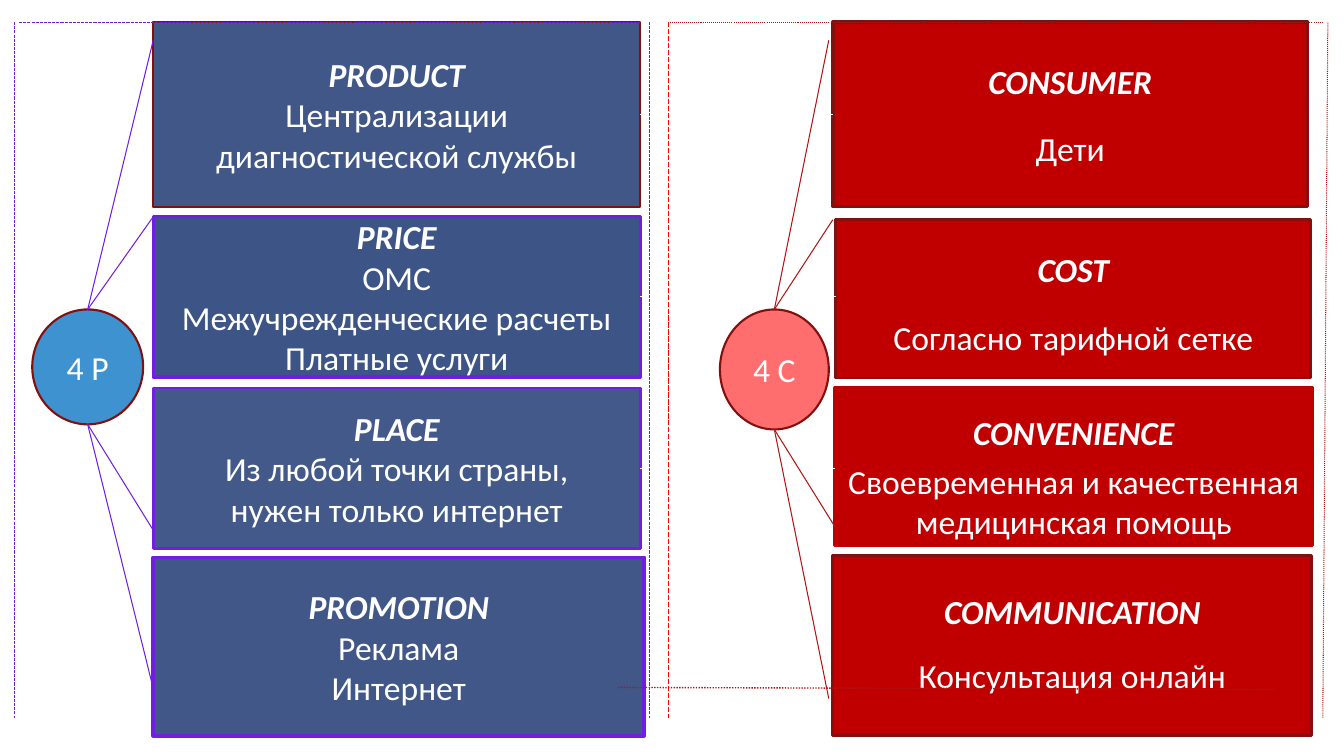
from dataclasses import dataclass
from lxml.etree import SubElement
from pptx import Presentation
from pptx.dml.color import RGBColor
from pptx.enum.dml import MSO_LINE
from pptx.enum.shapes import MSO_CONNECTOR, MSO_SHAPE
from pptx.enum.text import MSO_ANCHOR, PP_ALIGN
from pptx.oxml.ns import qn
from pptx.util import Inches, Pt


@dataclass(frozen=True)
class Theme:
    font: str = "Calibri"
    size: int = 24
    white: str = "FFFFFF"
    navy: str = "002060"
    blue: str = "0070C0"
    violet: str = "701FDD"
    crimson: str = "C00000"
    scarlet: str = "FF0000"
    maroon: str = "82100E"
    brick: str = "B01513"


theme = Theme()
SLIDE_SIZE = 13.33, 7.5
TOP, BOTTOM = 0.22, 7.12
INSET = 0.05

PRODUCT_SIDE = {
    "hub": {"text": "4 Р", "at": (0.32, 3.07, 1.1, 1.14), "fill": theme.blue, "opacity": 76},
    "fill": theme.navy,
    "ray": theme.violet,
    "ray_ends": [(1.52, 0.4), (1.52, 2.15), (1.52, 5.26), (1.52, 6.83)],
    "cards": [
        {"lines": ["PRODUCT", "Централизации диагностической службы"],
         "at": (1.52, TOP, 4.83, 1.83), "opacity": 75, "border": (theme.maroon, 1.5)},
        {"lines": ["PRICE", "ОМС", "Межучрежденческие расчеты", "Платные услуги"],
         "at": (1.52, 2.15, 4.83, 1.59), "opacity": 76, "border": (theme.violet, 2.25)},
        {"lines": ["PLACE", "Из любой точки страны,", "нужен только интернет"],
         "at": (1.52, 3.85, 4.83, 1.59), "opacity": 74, "border": (theme.violet, 2)},
        {"lines": ["PROMOTION", "Реклама", "Интернет"],
         "at": (1.52, 5.53, 4.87, 1.77), "opacity": 75, "border": (theme.violet, 2.5)},
    ],
}
CONSUMER_SIDE = {
    "hub": {"text": "4 С", "at": (7.14, 3.07, 1.08, 1.19), "fill": theme.scarlet, "opacity": 57},
    "fill": theme.crimson,
    "ray": theme.brick,
    "ray_ends": [(8.22, 0.4), (8.26, 2.18), (8.29, 5.24), (8.22, 6.93)],
    "cards": [
        {"lines": ["CONSUMER", "Дети"], "gap": 19.5,
         "at": (8.26, TOP, 4.71, 1.83), "border": (theme.maroon, 2.5)},
        {"lines": ["COST", "Согласно тарифной сетке"], "gap": 19.5, "insets": (0.13, INSET),
         "at": (8.29, 2.18, 4.71, 1.57), "border": (theme.maroon, 2)},
        {"lines": ["CONVENIENCE", "Своевременная и качественная медицинская помощь"],
         "gap": 6, "insets": (0.2, 0),
         "at": (8.28, 3.85, 4.74, 1.56), "border": (theme.crimson, 2.25)},
        {"lines": ["COMMUNICATION", "Консультация онлайн"], "gap": 17, "insets": (INSET, 0.1),
         "at": (8.26, 5.51, 4.75, 1.79), "border": (theme.maroon, 2)},
    ],
}
DASH, DOT = MSO_LINE.SQUARE_DOT, MSO_LINE.ROUND_DOT
FRAME_LINES = [
    ((6.63, TOP), (6.63, BOTTOM), theme.scarlet, 1.25, DASH),
    ((6.13, 6.82), (12.65, 6.84), theme.brick, 1, DOT),
    ((13.12, BOTTOM), (13.17, TOP), theme.brick, 0.75, DOT),
    ((13.12, TOP), (6.63, TOP), theme.brick, 0.75, DOT),
    ((0.14, TOP), (0.14, BOTTOM), theme.violet, 0.75, DASH),
    ((0.19, TOP), (6.35, TOP), theme.violet, 0.75, DASH),
    ((6.44, TOP), (6.44, BOTTOM), theme.violet, 0.75, DASH),
]
DASH_NAMES = {DASH: "sysDash", DOT: "sysDot"}


def add_panel(page, preset, at, fill, opacity, border, lines):
    box = page.shapes.add_shape(preset, *map(Inches, at))
    box.shadow.inherit = False
    box.fill.solid()
    box.fill.fore_color.rgb = RGBColor.from_string(fill)
    if opacity < 100:
        color = box.fill._xPr.find(qn("a:solidFill"))[0]
        SubElement(color, qn("a:alpha")).set("val", str(opacity * 1000))
    box.line.color.rgb = RGBColor.from_string(border[0])
    box.line.width = Pt(border[1])
    frame = box.text_frame
    frame.word_wrap = True
    frame.vertical_anchor = MSO_ANCHOR.MIDDLE
    frame.text = "\n".join(lines)
    for para in frame.paragraphs:
        para.alignment = PP_ALIGN.CENTER
        for span in para.runs:
            span.font.name = theme.font
            span.font.size = Pt(theme.size)
            span.font.color.rgb = RGBColor.from_string(theme.white)
    return frame


def add_card(page, card, fill):
    frame = add_panel(page, MSO_SHAPE.RECTANGLE, card["at"], fill,
                      card.get("opacity", 100), card["border"], card["lines"])
    top, bottom = card.get("insets", (INSET, INSET))
    frame.margin_top, frame.margin_bottom = Inches(top), Inches(bottom)
    heading, detail = frame.paragraphs[:2]
    heading.runs[0].font.bold = heading.runs[0].font.italic = True
    if "gap" in card:
        detail.space_before = Pt(card["gap"])


def add_line(page, start, end, color, width=0.75, dash=None):
    line = page.shapes.add_connector(MSO_CONNECTOR.STRAIGHT, *map(Inches, (*start, *end)))
    line.line.color.rgb = RGBColor.from_string(color)
    line.line.width = Pt(width)
    if dash is not None:
        line.line.dash_style = dash
        line.line._ln.find(qn("a:prstDash")).set("val", DASH_NAMES[dash])
    SubElement(line._element.spPr, qn("a:effectLst"))


def add_side(page, side):
    for card in side["cards"]:
        add_card(page, card, side["fill"])
    hub = side["hub"]
    add_panel(page, MSO_SHAPE.OVAL, hub["at"], hub["fill"], hub["opacity"],
              (theme.maroon, 1.5), [hub["text"]])


def add_rays(page, side):
    left, top, width, height = side["hub"]["at"]
    for index, end in enumerate(side["ray_ends"]):
        start_y = top if index < 2 else top + height
        add_line(page, (left + width / 2, start_y), end, side["ray"])


def add_links(page):
    pairs = list(zip(PRODUCT_SIDE["cards"], CONSUMER_SIDE["cards"]))
    for product, consumer in pairs[:3]:
        left, top, width, height = product["at"]
        middle = top + height / 2
        add_line(page, (left + width, middle), (consumer["at"][0], middle), theme.white)


def main():
    deck = Presentation()
    deck.slide_width, deck.slide_height = map(Inches, SLIDE_SIZE)
    page = deck.slides.add_slide(deck.slide_layouts[6])
    sides = PRODUCT_SIDE, CONSUMER_SIDE
    for side in sides:
        add_side(page, side)
    add_links(page)
    for side in sides:
        add_rays(page, side)
    for frame_line in FRAME_LINES:
        add_line(page, *frame_line)
    deck.save("out.pptx")


if __name__ == "__main__":
    main()
